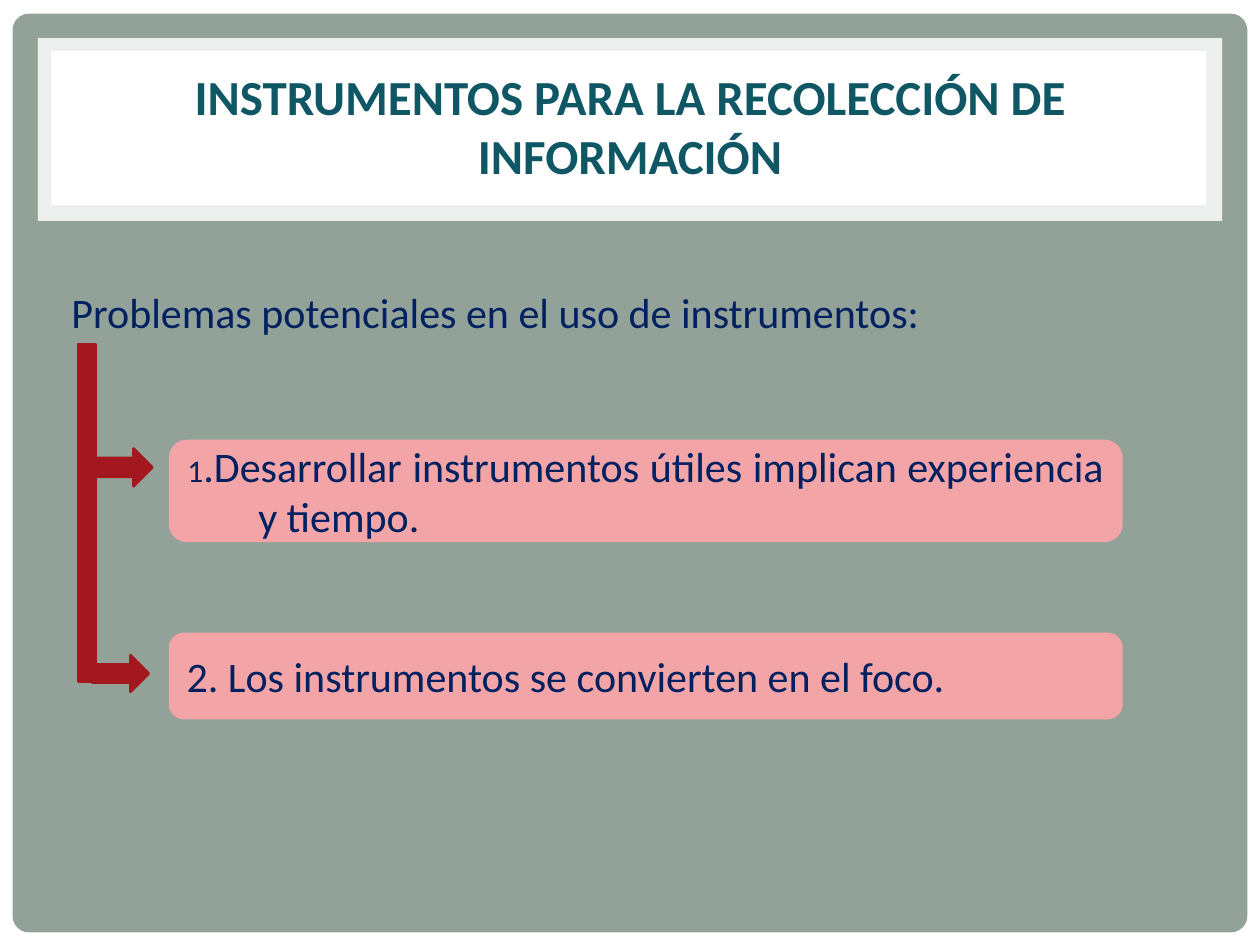
from pptx import Presentation
from pptx.dml.color import RGBColor
from pptx.enum.shapes import MSO_SHAPE
from pptx.enum.text import MSO_ANCHOR, PP_ALIGN
from pptx.oxml.ns import qn
from pptx.util import Pt
from lxml.etree import SubElement

WHITE = RGBColor(0xFF, 0xFF, 0xFF)
SAGE = RGBColor(0x93, 0xA2, 0x99)
TEAL = RGBColor(0x10, 0x57, 0x66)
NAVY = RGBColor(0x00, 0x20, 0x60)
PINK = RGBColor(0xF2, 0xA4, 0xA7)
RED = RGBColor(0xA3, 0x17, 0x1E)


def write_text(frame, spans, color=NAVY, bold=False, align=PP_ALIGN.LEFT,
               anchor=MSO_ANCHOR.TOP, before=0, hanging=0):
    """Fill a text frame with one paragraph of (text, size) spans."""
    frame.word_wrap = True
    frame.vertical_anchor = anchor
    para = frame.paragraphs[0]
    para.alignment = align
    para.space_before = Pt(before)
    if hanging:
        properties = para._p.get_or_add_pPr()
        properties.set("marL", str(Pt(hanging)))
        properties.set("indent", str(-Pt(hanging)))
    for text, size in spans:
        span = para.add_run()
        span.text = text
        span.font.name = "Calibri"
        span.font.size = Pt(size)
        span.font.bold = bold
        span.font.color.rgb = color


class SlideBuilder:
    line_width = Pt(1.5)

    def __init__(self, page):
        self.page = page
        page.background.fill.solid()
        page.background.fill.fore_color.rgb = WHITE

    def shape(self, kind, left, top, width, height, color,
              outlined=False, opacity=100, radius=None):
        """Add a preset shape; opacity is a percentage, radius is in points."""
        shape = self.page.shapes.add_shape(
            kind, Pt(left), Pt(top), Pt(width), Pt(height))
        shape.shadow.inherit = False
        shape.fill.solid()
        shape.fill.fore_color.rgb = color
        if opacity < 100:
            color_node = shape.fill._xPr.find(qn("a:solidFill"))[0]
            SubElement(color_node, qn("a:alpha"), val=str(opacity * 1000))
        if outlined:
            shape.line.color.rgb = color
            shape.line.width = self.line_width
        else:
            shape.line.fill.background()
        if radius is not None:
            shape.adjustments[0] = radius / min(width, height)
        return shape

    def text(self, left, top, width, height, spans, **style):
        box = self.page.shapes.add_textbox(
            Pt(left), Pt(top), Pt(width), Pt(height))
        write_text(box.text_frame, spans, **style)

    def problem(self, top, height, spans):
        card = self.shape(MSO_SHAPE.ROUNDED_RECTANGLE, 97.2, top, 543.6, height,
                          PINK, outlined=True)
        write_text(card.text_frame, spans, align=PP_ALIGN.JUSTIFY,
                   anchor=MSO_ANCHOR.MIDDLE, hanging=40.5)

    def arrow(self, left, top, height):
        self.shape(MSO_SHAPE.RIGHT_ARROW, left, top, 32.4, height, RED, outlined=True)


def main():
    deck = Presentation()
    deck.slide_width, deck.slide_height = Pt(720), Pt(540)
    slide = SlideBuilder(deck.slides.add_slide(deck.slide_layouts[6]))

    slide.shape(MSO_SHAPE.ROUNDED_RECTANGLE, 7.2, 7.8, 705.6, 525, SAGE, radius=9.4)
    slide.shape(MSO_SHAPE.RECTANGLE, 21.6, 21.8, 676.8, 104.4, WHITE, opacity=83)
    slide.shape(MSO_SHAPE.RECTANGLE, 29.4, 29.3, 660, 88, WHITE)

    slide.text(49.7, 28.8, 620.6, 85.7,
               [("INSTRUMENTOS PARA LA RECOLECCIÓN DE INFORMACIÓN", 28)],
               color=TEAL, bold=True, align=PP_ALIGN.CENTER,
               anchor=MSO_ANCHOR.MIDDLE)
    slide.text(33.8, 160, 648, 41,
               [("Problemas potenciales en el uso de instrumentos:", 24)], before=6)

    slide.problem(252, 57, [
        ("1", 18),
        (".Desarrollar instrumentos útiles implican experiencia y tiempo.", 24)])
    slide.problem(362.2, 48.2, [("2. Los instrumentos se convierten en el foco.", 24)])

    slide.arrow(54.7, 256.3, 21.6)
    slide.arrow(52.6, 374.4, 20.9)
    slide.shape(MSO_SHAPE.RECTANGLE, 44.6, 196.6, 10.1, 193, RED, outlined=True)

    deck.save("out.pptx")


if __name__ == "__main__":
    main()
